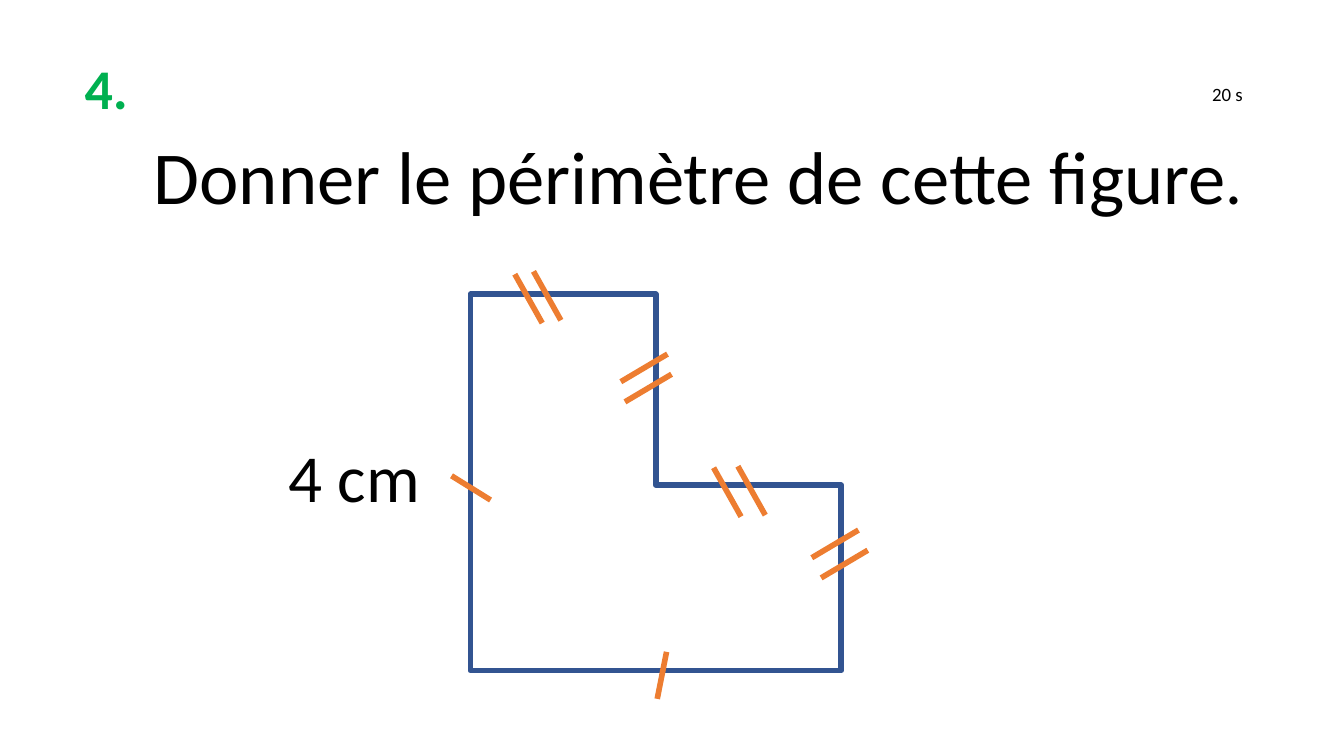
"""Build a quiz slide asking for the perimeter of an L-shaped figure."""
import pptx
import pptx.dml.color
import pptx.enum.shapes
import pptx.enum.text
import pptx.oxml.ns
import pptx.util

Pt = pptx.util.Pt
ALIGN = pptx.enum.text.PP_ALIGN
COLORS = {
    "number": "00B050",
    "text": "000000",
    "figure": "FFFFFF",
    "outline": "325491",
    "tick": "ED7D31",
}
TICKS = [
    ((14.7, 26.2), [(275.8, 146.9), (285.8, 145.4), (382.3, 250.6), (395.3, 249.8)]),
    ((25, -14.8), [(334.8, 215.3), (332.6, 204.5), (439.9, 309.6), (434.9, 298.8)]),
    ((5, -25.2), [(352.1, 374.4)]),
    ((20.9, 13), [(241.9, 254.9)]),
]


def color(name):
    return pptx.dml.color.RGBColor.from_string(COLORS[name])


def add_text(slide, box, text, size, name="text", bold=False, align=ALIGN.LEFT):
    shape = slide.shapes.add_textbox(*map(Pt, box))
    shape.text_frame.word_wrap = True
    paragraph = shape.text_frame.paragraphs[0]
    paragraph.alignment = align
    paragraph.font.name = "Calibri"
    paragraph.font.size = Pt(size)
    paragraph.font.bold = bold
    paragraph.font.color.rgb = color(name)
    paragraph.add_run().text = text
    return paragraph


def style_line(line, name):
    line.color.rgb = color(name)
    line.width = Pt(3)


def add_figure(slide, box):
    shape = slide.shapes.add_shape(
        pptx.enum.shapes.MSO_SHAPE.CORNER, *map(Pt, box))
    shape.shadow.inherit = False
    shape.fill.solid()
    shape.fill.fore_color.rgb = color("figure")
    style_line(shape.line, "outline")


def add_tick(slide, start, step):
    x, y = start
    dx, dy = step
    connector = slide.shapes.add_connector(
        pptx.enum.shapes.MSO_CONNECTOR.STRAIGHT, Pt(x), Pt(y), Pt(x + dx), Pt(y + dy))
    style_line(connector.line, "tick")
    properties = connector._element.spPr
    properties.append(
        properties.makeelement(pptx.oxml.ns.qn("a:effectLst"), {}))


def main():
    presentation = pptx.Presentation()
    presentation.slide_width = Pt(720)
    presentation.slide_height = Pt(405)
    slide = presentation.slides.add_slide(presentation.slide_layouts[6])

    add_text(slide, (38.2, 25.2, 38.2, 43.9), "4.", 30, "number", bold=True)
    add_text(slide, (642.3, 41, 42, 19.4), "20 s", 10.1)
    question = add_text(slide, (70.6, 66.2, 607, 55.4),
                        "Donner le périmètre de cette figure", 40, align=ALIGN.CENTER)
    full_stop = question.add_run()
    full_stop.text = "."
    full_stop.font.size = Pt(36)

    add_figure(slide, (252, 157.7, 198.7, 201.6))
    for step, starts in TICKS:
        for start in starts:
            add_tick(slide, start, step)
    add_text(slide, (147.6, 229.7, 97.9, 51.1), "4 cm", 36)

    presentation.save("out.pptx")


if __name__ == "__main__":
    main()
